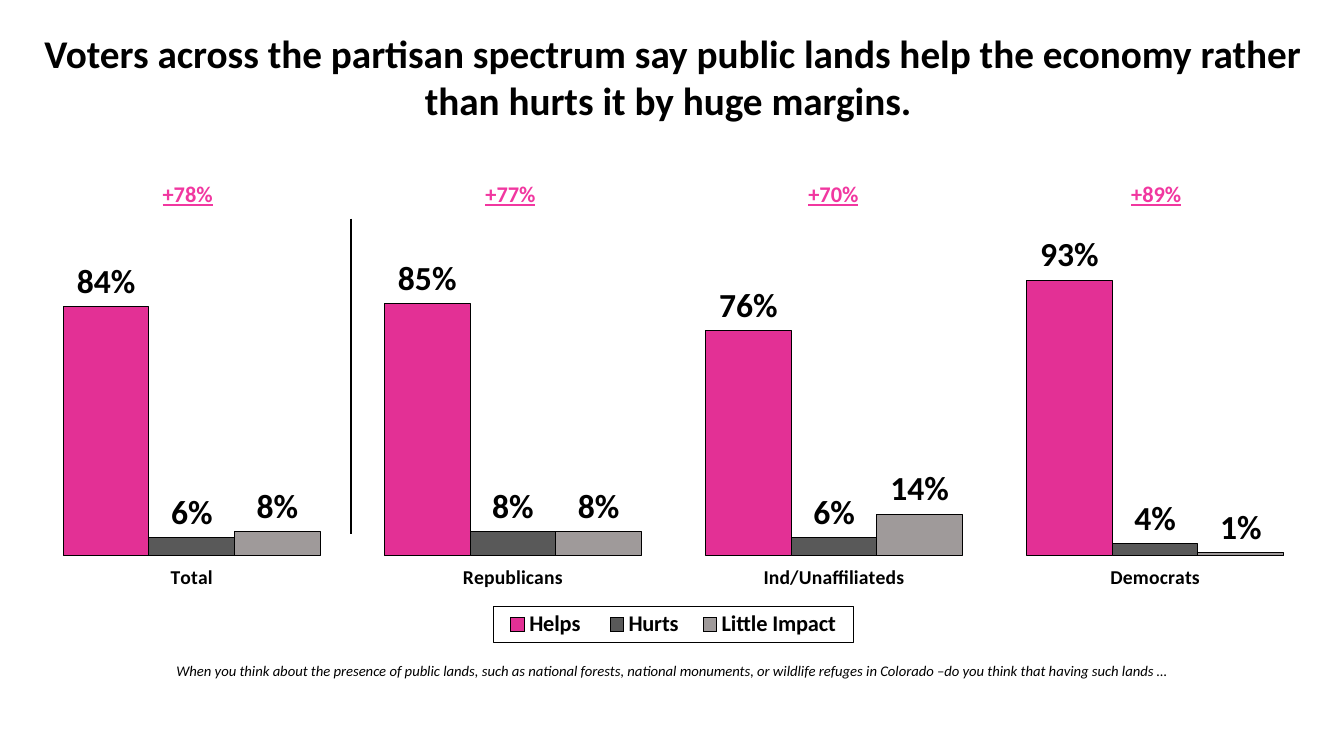
from dataclasses import dataclass

from lxml.etree import SubElement
from pptx import Presentation
from pptx.chart.chart import Chart
from pptx.chart.data import CategoryChartData
from pptx.dml.color import RGBColor
from pptx.enum.chart import XL_CHART_TYPE as ChartType
from pptx.enum.chart import XL_LABEL_POSITION as LabelPosition
from pptx.enum.chart import XL_LEGEND_POSITION as LegendPosition
from pptx.enum.chart import XL_TICK_MARK as TickMark
from pptx.enum.shapes import MSO_CONNECTOR as ConnectorType
from pptx.enum.text import MSO_ANCHOR as Anchor
from pptx.enum.text import MSO_AUTO_SIZE as AutoSize
from pptx.enum.text import PP_ALIGN as Align
from pptx.oxml import parse_xml
from pptx.oxml.ns import nsdecls, qn
from pptx.slide import Slide
from pptx.text.text import Font, TextFrame
from pptx.util import Inches, Pt

FONT = "Calibri"
COLORS = {
    "text": "000000",
    "helps": "E33095",
    "hurts": "595959",
    "little": "9F9A9A",
    "margin": "F137A0",
}
TITLE = (
    "Voters across the partisan spectrum say public lands help the economy "
    "rather than hurts it by huge margins. "
)
QUESTION = (
    "When you think about the presence of public lands, such as national forests, "
    "national monuments, or wildlife refuges in Colorado –do you think that having "
    "such lands …"
)


@dataclass
class Answer:
    name: str
    color: str
    shares: tuple[float, ...]


@dataclass
class Party:
    name: str
    margin: str


ANSWERS = [
    Answer("Helps ", "helps", (0.84, 0.85, 0.76, 0.93)),
    Answer("Hurts", "hurts", (0.06, 0.08, 0.06, 0.04)),
    Answer("Little Impact", "little", (0.08, 0.08, 0.14, 0.01)),
]
PARTIES = [
    Party("Total", "+78%"),
    Party("Republicans", "+77%"),
    Party("Ind/Unaffiliateds", "+70%"),
    Party("Democrats", "+89%"),
]


def rgb(name: str) -> RGBColor:
    return RGBColor.from_string(COLORS[name])


def style_font(font: Font, size: float, color: str = "text", bold: bool = False) -> None:
    font.name = FONT
    font.size = Pt(size)
    font.bold = bold
    font.color.rgb = rgb(color)


def add_centered_run(
    frame: TextFrame, text: str, size: float, color: str = "text", bold: bool = False
) -> Font:
    paragraph = frame.paragraphs[0]
    paragraph.alignment = Align.CENTER
    run = paragraph.add_run()
    run.text = text
    style_font(run.font, size, color, bold)
    return run.font


def manual_layout(x: float, y: float, width: float, height: float, inner: bool = False):
    """Return a c:layout element given in fractions of the chart area."""
    target = '<c:layoutTarget val="inner"/>' if inner else ""
    return parse_xml(
        f'<c:layout {nsdecls("c")}><c:manualLayout>{target}'
        '<c:xMode val="edge"/><c:yMode val="edge"/>'
        f'<c:x val="{x}"/><c:y val="{y}"/><c:w val="{width}"/><c:h val="{height}"/>'
        "</c:manualLayout></c:layout>"
    )


def add_title(slide: Slide) -> None:
    title = slide.shapes.title
    title.left, title.top = Inches(0.29), Inches(0.24)
    title.width, title.height = Inches(12.76), Inches(1.04)
    frame = title.text_frame
    frame.auto_size = AutoSize.NONE
    frame.vertical_anchor = Anchor.TOP
    add_centered_run(frame, TITLE, 28, bold=True)


def format_series(chart: Chart) -> None:
    for series, answer in zip(chart.plots[0].series, ANSWERS):
        series.invert_if_negative = False
        series.format.fill.solid()
        series.format.fill.fore_color.rgb = rgb(answer.color)
        series.format.line.color.rgb = rgb("text")
        series.format.line.width = Pt(0.75)
        labels = series.data_labels
        labels.show_value = True
        labels.position = LabelPosition.OUTSIDE_END
        labels.number_format = "0%"
        labels.number_format_is_linked = False
        style_font(labels.font, 24, bold=True)


def format_axes(chart: Chart) -> None:
    category_axis = chart.category_axis
    category_axis.major_tick_mark = TickMark.OUTSIDE
    category_axis.format.line.fill.background()
    style_font(category_axis.tick_labels.font, 14, bold=True)
    value_axis = chart.value_axis
    value_axis.minimum_scale, value_axis.maximum_scale = -0.01, 1
    value_axis.has_major_gridlines = False
    value_axis.visible = False


def format_legend(chart: Chart) -> None:
    chart.has_legend = True
    legend = chart.legend
    legend.position = LegendPosition.BOTTOM
    legend.include_in_layout = False
    style_font(legend.font, 16, bold=True)
    overlay = legend._element.find(qn("c:overlay"))
    overlay.addprevious(manual_layout(0.36, 0.796, 0.28, 0.064))
    overlay.addnext(parse_xml(
        f'<c:spPr {nsdecls("c", "a")}><a:ln w="9525"><a:solidFill>'
        f'<a:srgbClr val="{COLORS["text"]}"/></a:solidFill></a:ln></c:spPr>'
    ))


def add_opinion_chart(slide: Slide) -> None:
    data = CategoryChartData(number_format="0%")
    data.categories = [party.name for party in PARTIES]
    for answer in ANSWERS:
        data.add_series(answer.name, answer.shares)
    chart = slide.shapes.add_chart(
        ChartType.COLUMN_CLUSTERED,
        Inches(0.31), Inches(1.61), Inches(12.74), Inches(5.54), data,
    ).chart
    chart.has_title = False
    style_font(chart.font, 18)
    plot = chart.plots[0]
    plot.gap_width = 75
    plot.overlap = 0
    plot.vary_by_categories = False
    format_series(chart)
    format_axes(chart)
    format_legend(chart)
    plot_area = chart._chartSpace.chart.plotArea
    for layout in plot_area.findall(qn("c:layout")):
        plot_area.remove(layout)
    plot_area.insert(0, manual_layout(0, 0.174, 1, 0.536, inner=True))


def add_margin_table(slide: Slide) -> None:
    table = slide.shapes.add_table(
        1, len(PARTIES), Inches(0.26), Inches(1.73), Inches(12.81), Inches(0.41)
    ).table
    table.first_row = False
    table.horz_banding = False
    for cell, party in zip(table.rows[0].cells, PARTIES):
        cell.fill.background()
        cell.vertical_anchor = Anchor.MIDDLE
        font = add_centered_run(cell.text_frame, party.margin, 16, "margin", bold=True)
        font.underline = True


def add_divider(slide: Slide) -> None:
    divider = slide.shapes.add_connector(
        ConnectorType.STRAIGHT, Inches(3.48), Inches(2.17), Inches(3.48), Inches(5.3)
    )
    divider.line.color.rgb = rgb("text")
    divider.line.width = Pt(1)
    SubElement(divider._element.spPr, qn("a:effectLst"))


def add_question(slide: Slide) -> None:
    box = slide.shapes.add_textbox(Inches(0.29), Inches(6.52), Inches(12.76), Inches(0.28))
    box.text_frame.word_wrap = True
    add_centered_run(box.text_frame, QUESTION, 10.5).italic = True


def main() -> None:
    presentation = Presentation()
    presentation.slide_width, presentation.slide_height = Inches(13.33), Inches(7.5)
    slide = presentation.slides.add_slide(presentation.slide_layouts.get_by_name("Title Only"))
    add_title(slide)
    add_opinion_chart(slide)
    add_margin_table(slide)
    add_divider(slide)
    add_question(slide)
    presentation.save("out.pptx")


if __name__ == "__main__":
    main()
